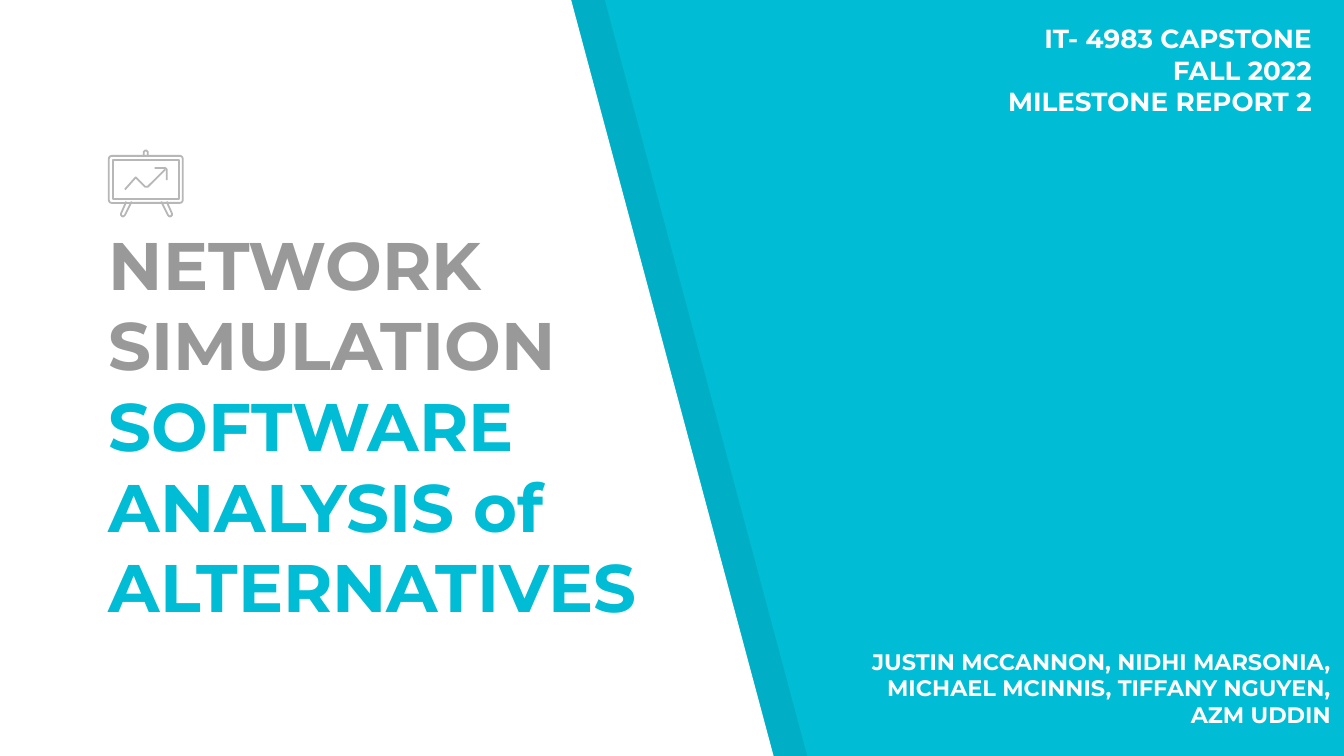
from lxml.etree import SubElement
from pptx import Presentation
from pptx.dml.color import RGBColor
from pptx.enum.shapes import MSO_SHAPE
from pptx.enum.text import MSO_ANCHOR, MSO_AUTO_SIZE, PP_ALIGN
from pptx.oxml.ns import qn
from pptx.util import Inches, Pt

THEME = {
    "font": "Montserrat",
    "cyan": RGBColor(0x00, 0xBC, 0xD4),
    "grey": RGBColor(0x99, 0x99, 0x99),
    "icon": RGBColor(0xB7, 0xB7, 0xB7),
    "white": RGBColor(0xFF, 0xFF, 0xFF),
    "black": RGBColor(0x00, 0x00, 0x00),
    "title_size": 36,
    "course_size": 14,
    "team_size": 12,
    "icon_line": 0.96,
    "shade_alpha": 7,
}

SLIDE_WIDTH = Inches(10)
SLIDE_HEIGHT = SLIDE_WIDTH * 9 // 16

TITLE_PARTS = [
    ("NETWORK SIMULATION ", "grey"),
    ("SOFTWARE ANALYSIS of ALTERNATIVES", "cyan"),
]
TITLE_BOX = (0.71, 3.47, 4.62, 1.29)

CORNER_NOTES = [
    (["IT- 4983 CAPSTONE", "FALL 2022", "MILESTONE REPORT 2"],
     (7.38, 0.12, 2.48, 0.81), "course_size"),
    (["JUSTIN MCCANNON, NIDHI MARSONIA,", "MICHAEL MCINNIS, TIFFANY NGUYEN,", "AZM UDDIN"],
     (5.79, 4.77, 4.21, 0.91), "team_size"),
]

PANEL = [(0, -0.01), (-0.01, 5.64), (5.76, 5.64), (4.25, 0)]
SHADE_OFFSET = 0.25

BOARD = (0.81, 1.16, 0.55, 0.35)
SCREEN = (0.84, 1.19, 0.49, 0.29)
LEFT_LEG = [(0.94, 1.5), (0.9, 1.59), (0.9, 1.6), (0.91, 1.61), (0.92, 1.61), (0.93, 1.6), (0.98, 1.5)]
BOARD_CENTRE = 1.09
EASEL_LINES = [
    [(1.1, 1.16), (1.1, 1.13), (1.09, 1.12), (1.08, 1.12), (1.07, 1.13), (1.07, 1.16)],
    LEFT_LEG,
    [(2 * BOARD_CENTRE - x, y) for x, y in LEFT_LEG],
    [(1.23, 1.26), (1.1, 1.39), (1.09, 1.39), (1.08, 1.39), (1.01, 1.32), (0.93, 1.41)],
    [(1.15, 1.25), (1.23, 1.25), (1.24, 1.26), (1.24, 1.34)],
]


def draw_outline(shapes, points, closed):
    corners = [(Inches(x), Inches(y)) for x, y in points]
    builder = shapes.build_freeform(*corners[0])
    builder.add_line_segments(corners[1:], close=closed)
    outline = builder.convert_to_shape()
    outline.shadow.inherit = False
    return outline


def draw_panel(shapes, offset, colour):
    panel = draw_outline(shapes, [(x + offset, y) for x, y in PANEL], True)
    panel.fill.solid()
    panel.fill.fore_color.rgb = THEME[colour]
    panel.line.fill.background()
    return panel


def style_icon_part(part):
    part.shadow.inherit = False
    part.fill.background()
    part.line.color.rgb = THEME["icon"]
    part.line.width = Pt(THEME["icon_line"])


def draw_easel(shapes):
    easel = shapes.add_group_shape().shapes
    board = easel.add_shape(MSO_SHAPE.ROUNDED_RECTANGLE, *map(Inches, BOARD))
    board.adjustments[0] = 0.06
    screen = easel.add_shape(MSO_SHAPE.RECTANGLE, *map(Inches, SCREEN))
    strokes = [draw_outline(easel, points, False) for points in EASEL_LINES]
    for part in [board, screen, *strokes]:
        style_icon_part(part)


def style_run(run, size, colour):
    run.font.name = THEME["font"]
    run.font.size = Pt(THEME[size])
    run.font.bold = True
    run.font.color.rgb = THEME[colour]


def fill_title(title):
    title.left, title.top, title.width, title.height = map(Inches, TITLE_BOX)
    frame = title.text_frame
    frame.word_wrap = True
    frame.auto_size = MSO_AUTO_SIZE.NONE
    frame.vertical_anchor = MSO_ANCHOR.BOTTOM
    frame.margin_left = frame.margin_right = Inches(0.1)
    frame.margin_top = frame.margin_bottom = Inches(0.1)
    heading = frame.paragraphs[0]
    heading.alignment = PP_ALIGN.LEFT
    for words, colour in TITLE_PARTS:
        run = heading.add_run()
        run.text = words
        style_run(run, "title_size", colour)


def add_corner_note(shapes, lines, box, size):
    frame = shapes.add_textbox(*map(Inches, box)).text_frame
    frame.word_wrap = True
    frame.text = "\n".join(lines)
    for paragraph in frame.paragraphs:
        paragraph.alignment = PP_ALIGN.RIGHT
        style_run(paragraph.runs[0], size, "white")


def main():
    deck = Presentation()
    deck.slide_width, deck.slide_height = SLIDE_WIDTH, SLIDE_HEIGHT
    slide = deck.slides.add_slide(deck.slide_layouts[0])
    slide.background.fill.solid()
    slide.background.fill.fore_color.rgb = THEME["cyan"]
    shapes = slide.shapes
    title, subtitle = slide.placeholders
    tree = title.element.getparent()
    tree.remove(subtitle.element)

    shade = draw_panel(shapes, SHADE_OFFSET, "black")
    shade_colour = shade.element.spPr.find(qn("a:solidFill"))[0]
    SubElement(shade_colour, qn("a:alpha"), val=str(THEME["shade_alpha"] * 1000))
    draw_panel(shapes, 0, "white")

    tree.append(title.element)
    fill_title(title)
    draw_easel(shapes)
    for lines, box, size in CORNER_NOTES:
        add_corner_note(shapes, lines, box, size)
    deck.save("out.pptx")


if __name__ == "__main__":
    main()
